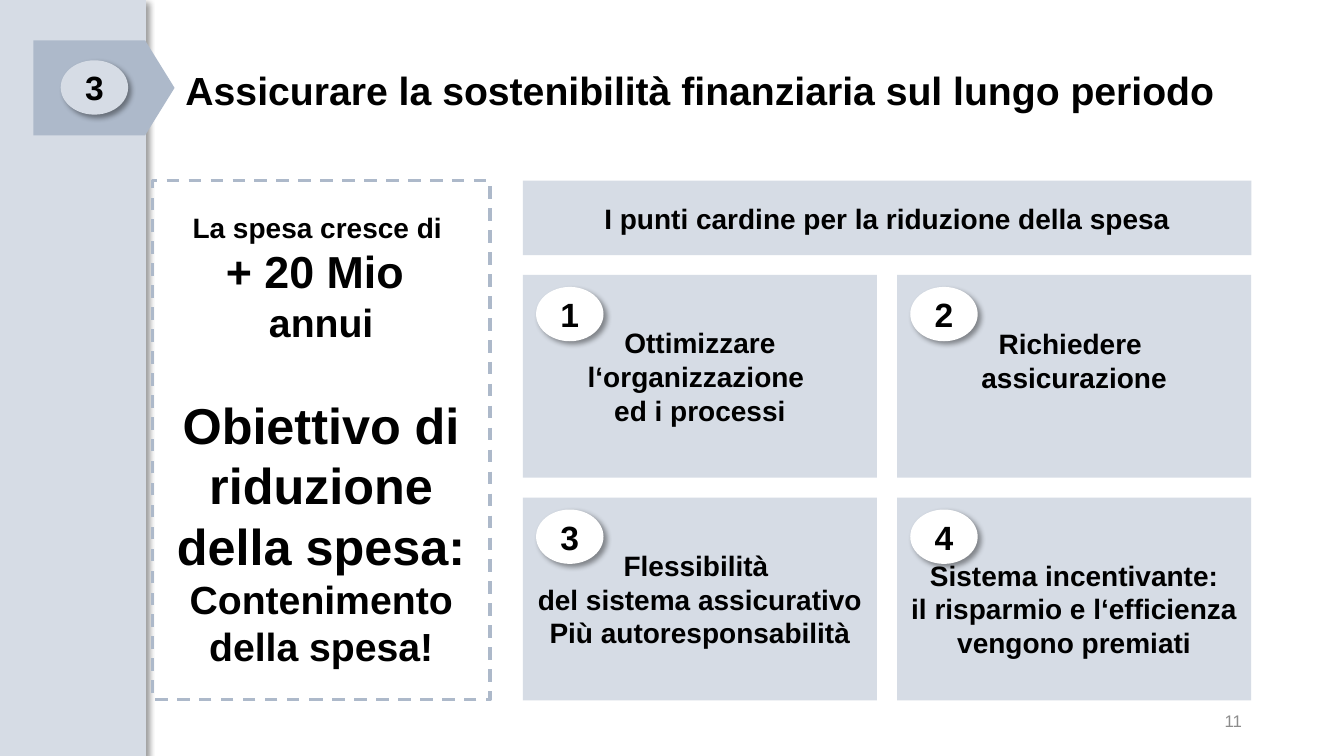
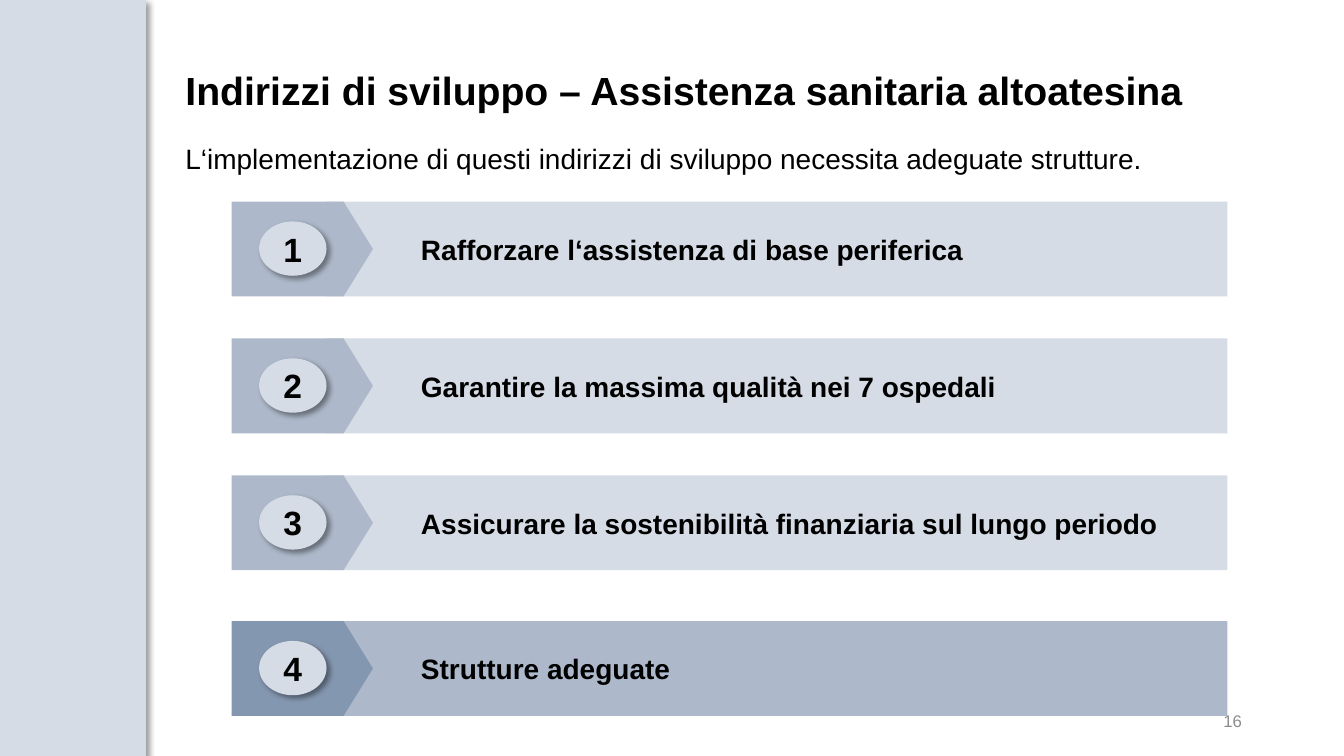
from lxml.etree import SubElement
from pptx import Presentation
from pptx.dml.color import RGBColor
from pptx.enum.dml import MSO_LINE
from pptx.enum.shapes import MSO_SHAPE
from pptx.enum.text import MSO_ANCHOR, MSO_AUTO_SIZE, PP_ALIGN
from pptx.oxml.ns import qn
from pptx.util import Cm, Pt

PALE, MID, DARK = "D6DCE5", "ADB9CA", "8497B0"
WHITE, BLACK, GREY = "FFFFFF", "000000", "8C8C8C"
ARROW_W, ARROW_H = 3.56, 2.39
BADGE_W, BADGE_H = 1.7, 1.37


def box(s, kind, x, y, w, h, fill=None, shadow=False, point=None):
    """Add a borderless shape; lengths in centimetres."""
    sp = s.shapes.add_shape(kind, Cm(x), Cm(y), Cm(w), Cm(h))
    sp.shadow.inherit = False
    sp.line.fill.background()
    if fill:
        sp.fill.solid()
        sp.fill.fore_color.rgb = RGBColor.from_string(fill)
    else:
        sp.fill.background()
    if point is not None:
        sp.adjustments[0] = point
    if shadow:
        effects = sp.element.spPr.find(qn("a:effectLst"))
        outer = SubElement(effects, qn("a:outerShdw"), blurRad=str(Pt(4)),
                           dist=str(Pt(3)), dir="2700000", algn="tl", rotWithShape="0")
        color = SubElement(outer, qn("a:srgbClr"), val=BLACK)
        SubElement(color, qn("a:alpha"), val="40000")
    return sp


def write(sp, text, size=20, bold=True, color=BLACK, align=PP_ALIGN.CENTER, before=0):
    """Add one paragraph to a shape, filling the empty first one if there is one."""
    tf = sp.text_frame
    tf.word_wrap = True
    tf.auto_size = MSO_AUTO_SIZE.NONE
    tf.vertical_anchor = MSO_ANCHOR.MIDDLE
    p = tf.add_paragraph() if tf.text else tf.paragraphs[0]
    p.alignment = align
    p.space_before = Pt(before)
    r = p.add_run()
    r.text = text
    r.font.name = "Arial"
    r.font.size = Pt(size)
    r.font.bold = bold
    r.font.color.rgb = RGBColor.from_string(color)
    return p


prs = Presentation()
prs.slide_width, prs.slide_height = Cm(33.87), Cm(19.05)
layout = prs.slide_layouts[5]

# Titles and page numbers
slides = []
for title, width, number in [
    ("Assicurare la sostenibilità finanziaria sul lungo periodo", 27.13, "11"),
    ("Indirizzi di sviluppo – Assistenza sanitaria altoatesina", 28.37, "16"),
]:
    s = prs.slides.add_slide(layout)
    sp = s.shapes.title
    sp.left, sp.top, sp.width, sp.height = Cm(4.42), Cm(1.02), Cm(width), Cm(2.62)
    write(sp, title, size=28, align=PP_ALIGN.LEFT).line_spacing = 0.9
    sp = s.shapes.add_textbox(Cm(23.93), Cm(17.65), Cm(7.62), Cm(1.02))
    write(sp, number, size=12, bold=False, color=GREY, align=PP_ALIGN.RIGHT)
    slides.append(s)
costs, directions = slides

# Side band, moved to the layout so that both slides share it
band = box(costs, MSO_SHAPE.RECTANGLE, 0, 0, 3.68, 19.05, PALE, shadow=True)
band.element.nvSpPr.cNvPr.set("id", "20")
layout.shapes.element.insert(2, band.element)

# Costs: spending panel
panel = box(costs, MSO_SHAPE.RECTANGLE, 3.84, 4.55, 8.51, 13.08)
panel.line.color.rgb = RGBColor.from_string(MID)
panel.line.width = Pt(2.25)
panel.line.dash_style = MSO_LINE.DASH
for text, size, before in [
    ("La spesa cresce di ", 20, 0),
    ("+ 20 Mio ", 32, 0),
    ("annui", 28, 0),
    ("Obiettivo di riduzione della spesa:", 36, 35),
    ("Contenimento della spesa!", 28, 0),
]:
    write(panel, text, size=size, before=before)

# Costs: heading and grid of four cards
header = box(costs, MSO_SHAPE.RECTANGLE, 13.18, 4.55, 18.36, 1.88, PALE)
write(header, "I punti cardine per la riduzione della spesa")
cards = [
    (["Ottimizzare l‘organizzazione ", "ed i processi"], 0.13, 0.13),
    (["Richiedere ", "assicurazione"], 0.13, 0.94),
    (["Flessibilità ", "del sistema assicurativo", "Più autoresponsabilità"], 0.13, 0.13),
    (["Sistema incentivante:", "il risparmio e l‘efficienza vengono premiati"], 0.62, 0.13),
]
badges = []
for i, (lines, top, bottom) in enumerate(cards):
    x, y = 13.18 + i % 2 * 9.43, 6.93 + i // 2 * 5.61
    card = box(costs, MSO_SHAPE.RECTANGLE, x, y, 8.92, 5.11, PALE)
    card.text_frame.margin_top = Cm(top)
    card.text_frame.margin_bottom = Cm(bottom)
    for line in lines:
        write(card, line)
    badges.append((costs, str(i + 1), x + 0.33, y + 0.3, WHITE))

# Directions: introduction and numbered bars
intro = directions.shapes.add_textbox(Cm(4.42), Cm(2.74), Cm(27.81), Cm(2.51))
write(intro, "L‘implementazione di questi indirizzi di sviluppo necessita adeguate strutture.",
      bold=False, align=PP_ALIGN.LEFT)
arrows = [(costs, "3", 0.84, 1.02, MID)]
for i, (text, y, fill, arrow_fill) in enumerate([
    ("Rafforzare l‘assistenza di base periferica", 5.08, PALE, MID),
    ("Garantire la massima qualità nei 7 ospedali", 8.53, PALE, MID),
    ("Assicurare la sostenibilità finanziaria sul lungo periodo", 11.98, PALE, MID),
    ("Strutture adeguate", 15.65, MID, DARK),
], 1):
    bar = box(directions, MSO_SHAPE.PENTAGON, 8.22, y, 22.71, ARROW_H, fill, point=0)
    bar.text_frame.margin_left = Cm(2.39)
    write(bar, text, align=PP_ALIGN.LEFT)
    arrows.append((directions, str(i), 5.84, y, arrow_fill))

# Arrows, then the round number badges on arrows and cards
for s, number, x, y, fill in arrows:
    box(s, MSO_SHAPE.PENTAGON, x, y, ARROW_W, ARROW_H, fill, point=0.31)
    badges.append((s, number, x + 0.69, y + 0.5, PALE))
for s, number, x, y, fill in badges:
    badge = box(s, MSO_SHAPE.OVAL, x, y, BADGE_W, BADGE_H, fill, shadow=True)
    write(badge, number, size=24)

prs.save("out.pptx")
